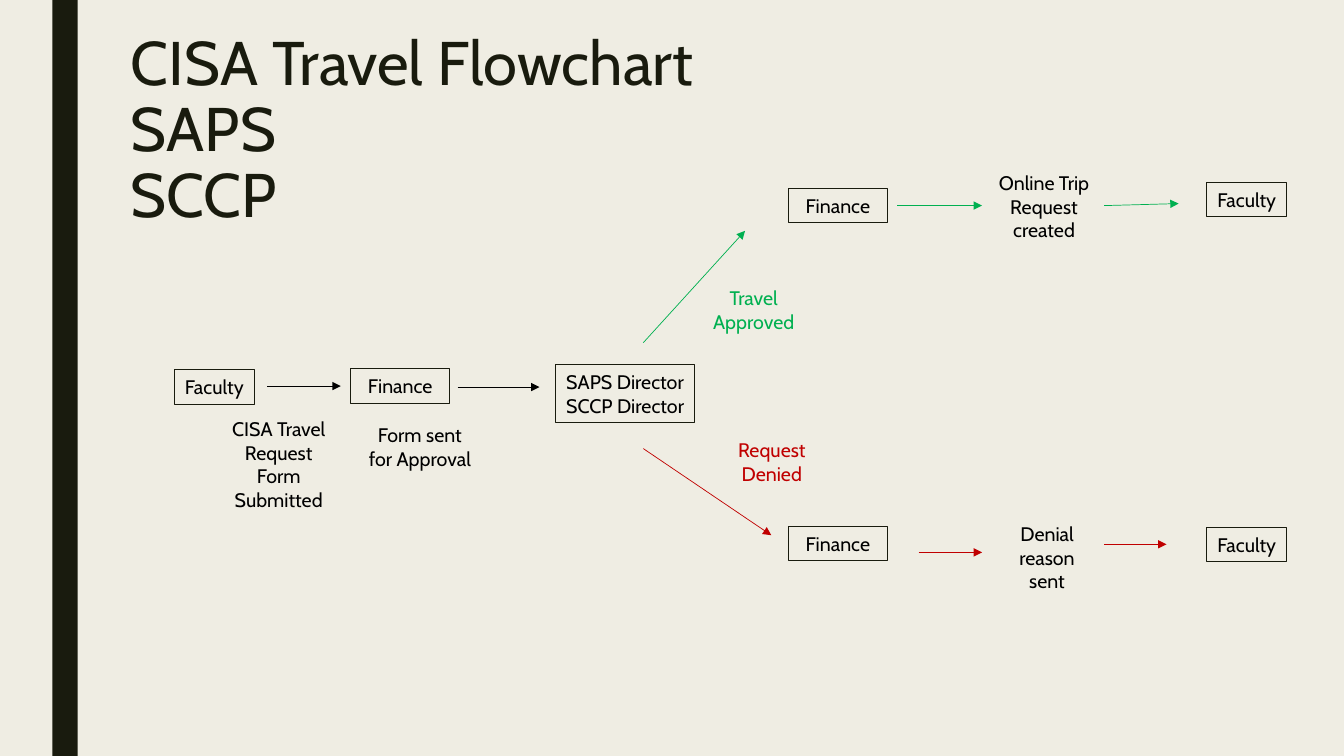
from dataclasses import dataclass

from lxml.etree import SubElement
from pptx import Presentation
from pptx.dml.color import RGBColor
from pptx.enum.shapes import MSO_CONNECTOR, MSO_SHAPE
from pptx.enum.text import MSO_ANCHOR, PP_ALIGN
from pptx.oxml.ns import qn
from pptx.util import Inches, Pt


@dataclass(frozen=True)
class Theme:
    font: str = "Cabin"
    background: RGBColor = RGBColor(0xEF, 0xED, 0xE3)
    dark: RGBColor = RGBColor(0x19, 0x1B, 0x0E)
    black: RGBColor = RGBColor(0, 0, 0)
    approved: RGBColor = RGBColor(0x00, 0xB0, 0x50)
    denied: RGBColor = RGBColor(0xC0, 0, 0)
    title_size: Pt = Pt(44)
    body_size: Pt = Pt(14)
    box_line: Pt = Pt(0.75)
    arrow_line: Pt = Pt(0.5)


theme = Theme()


def write(frame, text, size, color, align, wrap=True):
    """Fill a text frame and give all its runs the same look."""
    frame.text = text
    frame.word_wrap = wrap
    for paragraph in frame.paragraphs:
        paragraph.alignment = align
        for run in paragraph.runs:
            run.font.name = theme.font
            run.font.size = size
            run.font.color.rgb = color


deck = Presentation()
deck.slide_width, deck.slide_height = Inches(13.33), Inches(7.5)
slide = deck.slides.add_slide(deck.slide_layouts[6])
slide.background.fill.solid()
slide.background.fill.fore_color.rgb = theme.background
shapes = slide.shapes

side_bar = shapes.add_shape(
    MSO_SHAPE.RECTANGLE, Inches(0.52), 0, Inches(0.25), deck.slide_height)
side_bar.shadow.inherit = False
side_bar.fill.solid()
side_bar.fill.fore_color.rgb = theme.dark
side_bar.line.fill.background()

title = shapes.add_textbox(Inches(1.2), Inches(0.28), Inches(10.5), Inches(0.72))
write(title.text_frame, "CISA Travel Flowchart\nSAPS\nSCCP",
      theme.title_size, theme.dark, PP_ALIGN.LEFT)
for title_line in title.text_frame.paragraphs:
    title_line.line_spacing = 0.89

# People in the flow: size by role, then left and top of each box
ROLE_SIZES = {
    "Faculty": (0.79, 0.34),
    "Finance": (0.98, 0.34),
    "SAPS Director\nSCCP Director": (1.38, 0.57),
}
steps = [
    ("Faculty", 1.73, 3.67),
    ("Finance", 3.48, 3.66),
    ("SAPS Director\nSCCP Director", 5.51, 3.62),
    ("Finance", 7.82, 1.87),
    ("Faculty", 11.97, 1.81),
    ("Finance", 7.82, 5.22),
    ("Faculty", 11.97, 5.23),
]
for role, left, top in steps:
    width, height = ROLE_SIZES[role]
    step = shapes.add_shape(MSO_SHAPE.RECTANGLE, Inches(left), Inches(top),
                            Inches(width), Inches(height))
    step.shadow.inherit = False
    step.fill.background()
    step.line.color.rgb = theme.dark
    step.line.width = theme.box_line
    step.text_frame.vertical_anchor = MSO_ANCHOR.MIDDLE
    write(step.text_frame, role, theme.body_size, theme.black,
          PP_ALIGN.CENTER, wrap=False)

# Captions: left, top, width, height
captions = [
    ("CISA Travel Request Form Submitted", 2.15, 4.09, 1.23, 1.04, theme.black),
    ("Form sent for Approval", 3.55, 4.15, 1.23, 0.57, theme.black),
    ("Travel Approved", 6.82, 2.79, 1.31, 0.57, theme.approved),
    ("Request Denied", 7, 4.3, 1.31, 0.57, theme.denied),
    ("Online Trip Request created", 9.74, 1.65, 1.23, 0.81, theme.black),
    ("Denial reason sent", 9.82, 5.13, 1.13, 0.81, theme.black),
]
for text, left, top, width, height, color in captions:
    caption = shapes.add_textbox(Inches(left), Inches(top),
                                 Inches(width), Inches(height))
    write(caption.text_frame, text, theme.body_size, color, PP_ALIGN.CENTER)

# Arrows: start x, start y, end x, end y
arrows = [
    (2.65, 3.83, 3.38, 3.83, theme.black),
    (4.54, 3.84, 5.35, 3.84, theme.black),
    (6.38, 3.4, 7.39, 2.29, theme.approved),
    (8.9, 2.04, 9.74, 2.04, theme.approved),
    (10.95, 2.04, 11.69, 2.02, theme.approved),
    (6.38, 4.45, 7.65, 5.31, theme.denied),
    (9.11, 5.48, 9.74, 5.48, theme.denied),
    (10.95, 5.4, 11.57, 5.4, theme.denied),
]
for *ends, color in arrows:
    arrow = shapes.add_connector(MSO_CONNECTOR.STRAIGHT, *map(Inches, ends))
    arrow.line.color.rgb = color
    arrow.line.width = theme.arrow_line
    SubElement(arrow.line._get_or_add_ln(), qn("a:tailEnd"), type="triangle")
    SubElement(arrow._element.spPr, qn("a:effectLst"))

deck.save("out.pptx")
